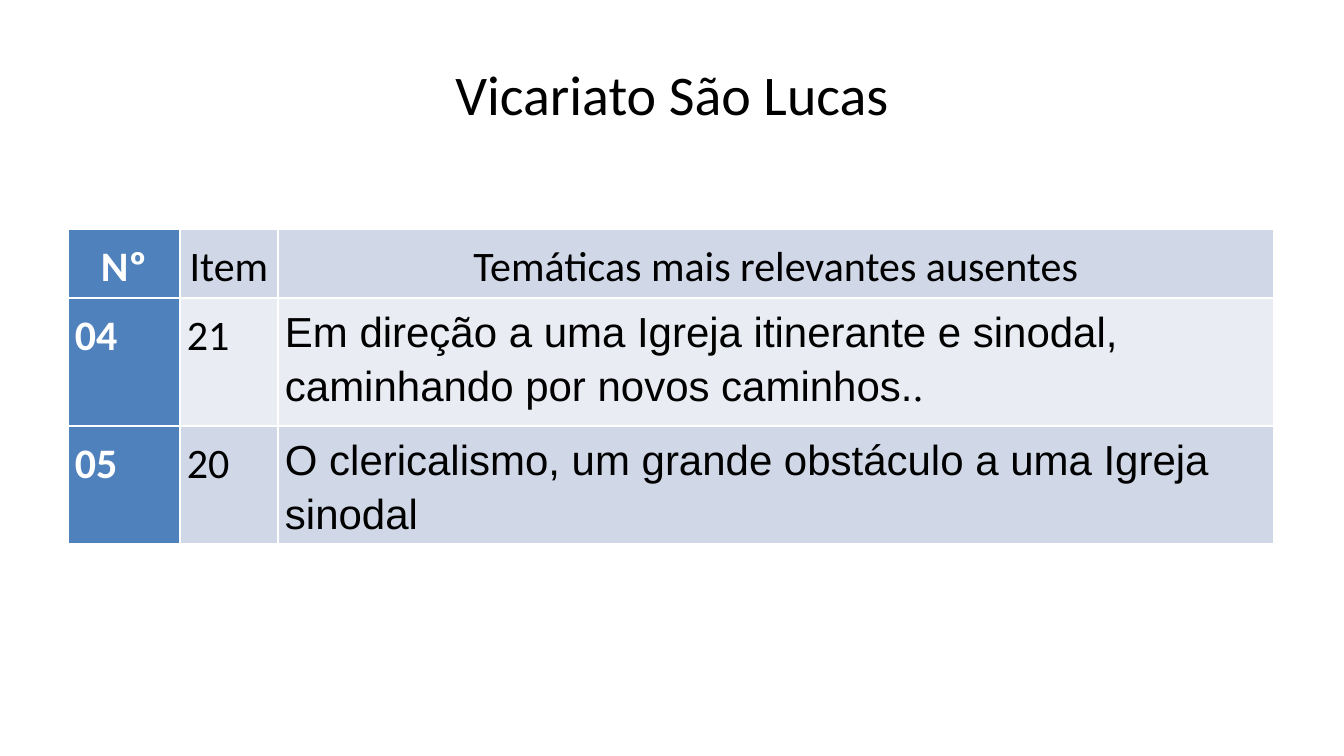
from lxml import etree
from pptx import Presentation
from pptx.dml.color import RGBColor
from pptx.enum.text import MSO_ANCHOR, PP_ALIGN
from pptx.oxml.ns import qn
from pptx.util import Pt

CENTER, LEFT = PP_ALIGN.CENTER, PP_ALIGN.LEFT
MIDDLE = MSO_ANCHOR.MIDDLE
BLACK = RGBColor(0x00, 0x00, 0x00)
WHITE = RGBColor(0xFF, 0xFF, 0xFF)
BLUE = RGBColor(0x4F, 0x81, 0xBD)
BAND_DARK = RGBColor(0xD0, 0xD8, 0xE7)
BAND_LIGHT = RGBColor(0xE9, 0xEC, 0xF3)
PX = 914400 / 100.8


def px(length):
    return round(length * PX)


def style_span(span, size, font, color, bold=False):
    span.font.size = Pt(size)
    span.font.name = font
    span.font.color.rgb = color
    span.font.bold = bold


deck = Presentation()
deck.slide_width, deck.slide_height = px(1344), px(756)
page = deck.slides.add_slide(deck.slide_layouts[6])

COLUMNS = [112, 98, 996]
ROWS = [69, 128, 117]
CELLS = [
    [["Nº"], ["Item"], ["Temáticas mais relevantes ausentes"]],
    [["04"], ["21"],
     ["Em direção a uma Igreja itinerante e sinodal, caminhando por novos caminhos.", "."]],
    [["05"], ["20"], ["O clericalismo, um grande obstáculo a uma Igreja sinodal"]],
]

frame = page.shapes.add_table(
    len(ROWS), len(COLUMNS), px(68), px(229), px(sum(COLUMNS)), px(sum(ROWS)))
table = frame.table
for column, width in zip(table.columns, COLUMNS):
    column.width = px(width)
for row, height in zip(table.rows, ROWS):
    row.height = px(height)

for row_index, row_texts in enumerate(CELLS):
    for column_index, texts in enumerate(row_texts):
        cell = table.cell(row_index, column_index)
        cell.margin_left = cell.margin_right = px(7)
        cell.margin_top = cell.margin_bottom = px(5)

        para = cell.text_frame.paragraphs[0]
        para.alignment = CENTER if row_index == 0 else LEFT
        para.line_spacing = 1.15
        is_number = column_index == 0
        fonts = ["Calibri"]
        if row_index > 0 and column_index == 2:
            fonts = ["Arial", "Times New Roman"]
        for text, font in zip(texts, fonts):
            span = para.add_run()
            span.text = text
            style_span(span, 30, font, WHITE if is_number else BLACK, is_number)

        properties = cell._tc.get_or_add_tcPr()
        for side in ("a:lnL", "a:lnR", "a:lnT", "a:lnB"):
            border = etree.SubElement(properties, qn(side), w=str(Pt(0.96)))
            fill = etree.SubElement(border, qn("a:solidFill"))
            etree.SubElement(fill, qn("a:srgbClr"), val=str(WHITE))
        cell.fill.solid()
        band = BAND_LIGHT if row_index % 2 else BAND_DARK
        cell.fill.fore_color.rgb = BLUE if is_number else band

title = page.shapes.add_textbox(px(67), px(30), px(1210), px(126))
title.text_frame.word_wrap = True
title.text_frame.vertical_anchor = MIDDLE
title.text_frame.text = "Vicariato São Lucas"
para = title.text_frame.paragraphs[0]
para.alignment = CENTER
style_span(para.runs[0], 40, "Calibri", BLACK)

deck.save("out.pptx")
